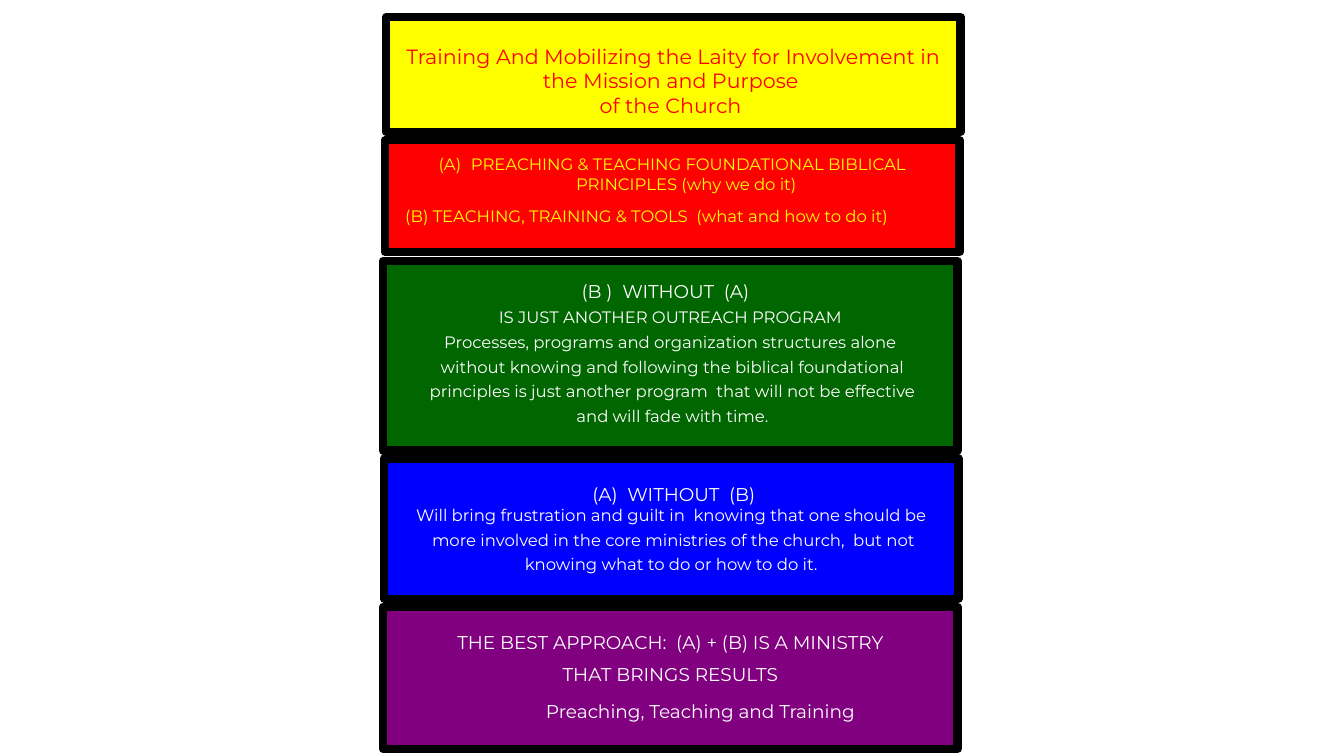
from dataclasses import dataclass

from lxml.etree import SubElement
from pptx import Presentation
from pptx.dml.color import RGBColor
from pptx.enum.shapes import MSO_SHAPE as Preset
from pptx.enum.text import MSO_ANCHOR as Anchor, PP_ALIGN as Align
from pptx.oxml.ns import qn
from pptx.slide import Slide
from pptx.text.text import _Paragraph as Paragraph
from pptx.util import Pt


@dataclass(frozen=True)
class Theme:
    font: str = "Montserrat"
    black: str = "000000"
    white: str = "FFFFFF"
    yellow: str = "FFFF00"
    red: str = "FF0000"
    green: str = "006600"
    blue: str = "0000FF"
    purple: str = "800080"
    title: float = 14.7
    heading: float = 13.2
    body: float = 11.8


THEME = Theme()
PANEL_WIDTH = 410.4
BORDER = 6
SIDE_INSET = 5
BOTTOM_INSET = 2.9
LINE_GAP = 3.5


@dataclass(frozen=True)
class Line:
    text: str
    size: float = THEME.body
    before: float = 0
    indent: float = 0
    hanging: float = 0
    numbering: str = ""
    align: Align = Align.CENTER


@dataclass(frozen=True)
class Panel:
    left: float
    top: float
    height: float
    fill: str
    ink: str
    top_inset: float
    lines: tuple[Line, ...]


PANELS = (
    Panel(275.8, 12.2, 82.1, THEME.yellow, THEME.red, 19, (
        Line("Training And Mobilizing the Laity for Involvement in the Mission and Purpose ", THEME.title),
        Line("of the Church ", THEME.title),
    )),
    Panel(275, 100.1, 79.9, THEME.red, THEME.yellow, 10.1, (
        Line(" PREACHING & TEACHING FOUNDATIONAL BIBLICAL PRINCIPLES (why we do it)",
             indent=20, hanging=20, numbering="alphaUcParenBoth"),
        Line("(B) TEACHING, TRAINING & TOOLS  (what and how to do it)",
             before=8.9, indent=9.5, align=Align.LEFT),
    )),
    Panel(273.6, 186.5, 135.4, THEME.green, THEME.white, 13.6, (
        Line("(B )  WITHOUT  (A)  ", THEME.heading),
        Line("IS JUST ANOTHER OUTREACH PROGRAM", before=LINE_GAP),
        Line("Processes, programs and organization structures alone", before=LINE_GAP),
        Line(" without knowing and following the biblical foundational", before=LINE_GAP),
        Line(" principles is just another program  that will not be effective", before=LINE_GAP),
        Line(" and will fade with time.", before=LINE_GAP),
    )),
    Panel(274.3, 327.6, 100.1, THEME.blue, THEME.white, 17.3, (
        Line("  (A)  WITHOUT  (B) ", THEME.heading),
        Line("Will bring frustration and guilt in  knowing that one should be"),
        Line(" more involved in the core ministries of the church,  but not", before=LINE_GAP),
        Line("knowing what to do or how to do it.", before=LINE_GAP),
    )),
    Panel(273.6, 433.4, 101.5, THEME.purple, THEME.white, 17.3, (
        Line("THE BEST APPROACH:  (A) + (B) IS A MINISTRY", THEME.heading),
        Line("THAT BRINGS RESULTS", THEME.heading, before=7.2),
        Line("Preaching, Teaching and Training", THEME.heading, before=10.7, indent=43),
    )),
)


def write_line(para: Paragraph, line: Line, ink: str) -> None:
    para.text = line.text
    para.alignment = line.align
    para.space_before = Pt(line.before)
    properties = para._p.get_or_add_pPr()
    properties.set("marL", str(Pt(line.indent)))
    properties.set("indent", str(Pt(-line.hanging)))
    if line.numbering:
        SubElement(properties, qn("a:buAutoNum"), type=line.numbering)
    para.font.name = THEME.font
    para.font.size = Pt(line.size)
    para.font.color.rgb = RGBColor.from_string(ink)


def draw_panel(page: Slide, panel: Panel) -> None:
    box = page.shapes.add_shape(
        Preset.RECTANGLE, Pt(panel.left), Pt(panel.top), Pt(PANEL_WIDTH), Pt(panel.height))
    box.shadow.inherit = False
    box.fill.solid()
    box.fill.fore_color.rgb = RGBColor.from_string(panel.fill)
    box.line.color.rgb = RGBColor.from_string(THEME.black)
    box.line.width = Pt(BORDER)
    frame = box.text_frame
    frame.word_wrap = True
    frame.vertical_anchor = Anchor.TOP
    frame.margin_left = frame.margin_right = Pt(SIDE_INSET)
    frame.margin_top = Pt(panel.top_inset)
    frame.margin_bottom = Pt(BOTTOM_INSET)
    for index, line in enumerate(panel.lines):
        para = frame.add_paragraph() if index else frame.paragraphs[0]
        write_line(para, line, panel.ink)


def main() -> None:
    deck = Presentation()
    deck.slide_width, deck.slide_height = Pt(960), Pt(540)
    page = deck.slides.add_slide(deck.slide_layouts[6])
    for panel in PANELS:
        draw_panel(page, panel)
    deck.save("out.pptx")


if __name__ == "__main__":
    main()
